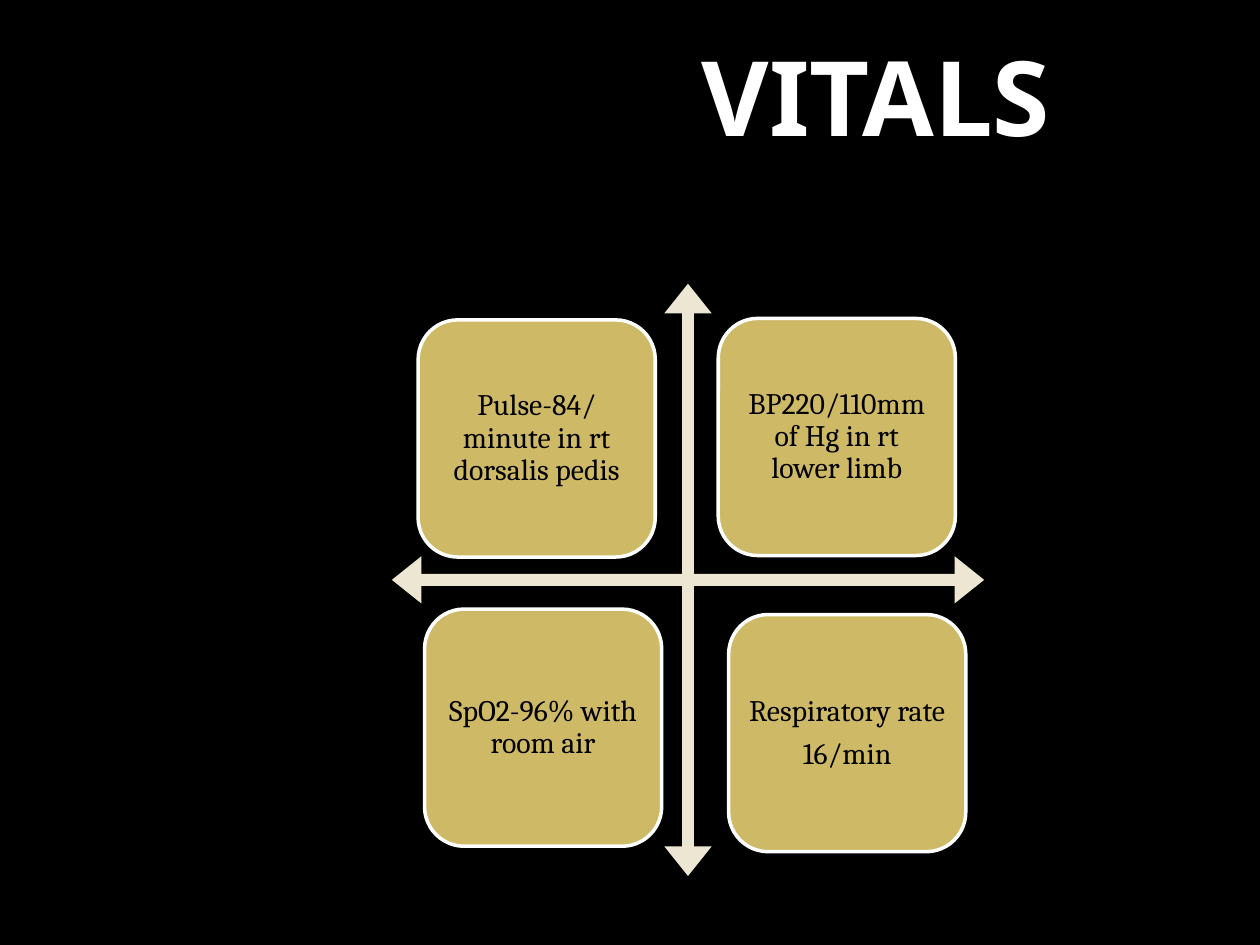
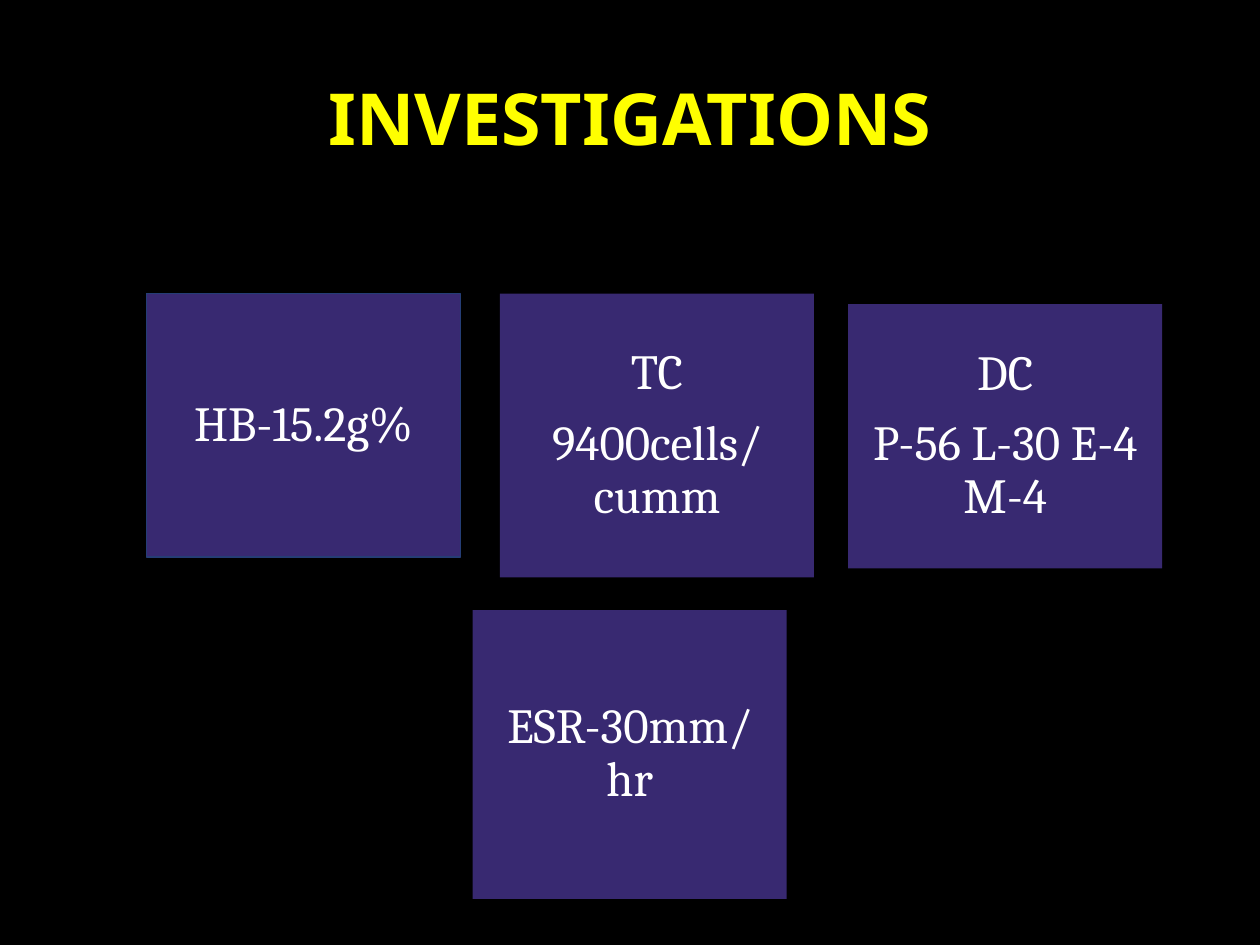
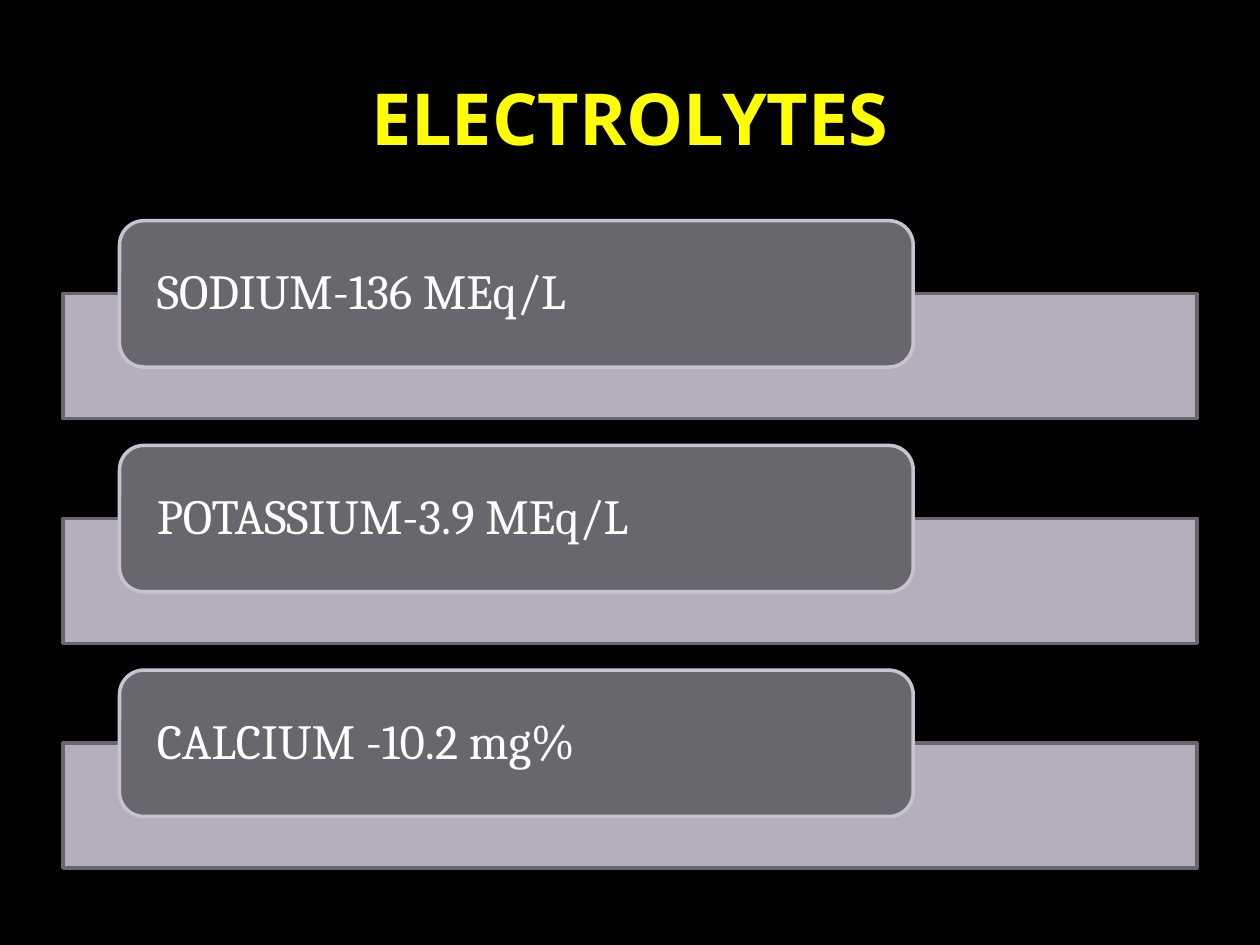
from lxml.etree import SubElement
from pptx import Presentation
from pptx.dml.color import RGBColor
from pptx.enum.shapes import MSO_SHAPE
from pptx.enum.text import MSO_ANCHOR, PP_ALIGN
from pptx.oxml.ns import qn
from pptx.util import Cm, Pt

COLORS = {
    "black": "000000", "white": "FFFFFF", "yellow": "FFFF00",
    "gold": "CEB966", "cream": "EDE6D3", "indigo": "382971",
    "navy": "253D75", "lilac": "C9C2D1", "gray": "69676D",
}
TITLE = {"name": "Noto Sans", "size": Pt(41), "bold": True}
BODY = {"name": "Cambria", "size": Pt(28)}
PARAGRAPH = {"line_spacing": 0.9, "space_after": Pt(10), "alignment": PP_ALIGN.CENTER}


def add_box(s, kind, at, fill, line=None, width=2):
    sp = s.shapes.add_shape(kind, *[Cm(v) for v in at])
    sp.shadow.inherit = False
    sp.fill.solid()
    sp.fill.fore_color.rgb = RGBColor.from_string(COLORS[fill])
    if line:
        sp.line.color.rgb = RGBColor.from_string(COLORS[line])
        sp.line.width = Pt(width)
    else:
        sp.line.fill.background()
    return sp


def write(sp, lines, font, color, paragraph, frame):
    tf = sp.text_frame
    frame = {"word_wrap": True, "vertical_anchor": MSO_ANCHOR.MIDDLE, **frame}
    for key, value in frame.items():
        setattr(tf, key, value)
    for i, line in enumerate(lines):
        p = tf.add_paragraph() if i else tf.paragraphs[0]
        for key, value in paragraph.items():
            setattr(p, key, value)
        r = p.add_run()
        r.text = line
        r.font.color.rgb = RGBColor.from_string(COLORS[color])
        for key, value in font.items():
            setattr(r.font, key, value)


prs = Presentation()
prs.slide_width, prs.slide_height = Cm(25.4), Cm(19.05)

main_title = (1.27, 0.76, 22.86, 3.18)
titles = [
    ("VITALS", (2.54, 0.64, 21.59, 2.54), "white", {"size": Pt(59.4)}, {"margin_left": Cm(8.89)}),
    ("INVESTIGATIONS", main_title, "yellow", {}, {}),
    ("ELECTROLYTES", main_title, "yellow", {}, {}),
]
slides = []
for text, at, color, font, frame in titles:
    s = prs.slides.add_slide(prs.slide_layouts[6])
    s.background.fill.solid()
    s.background.fill.fore_color.rgb = RGBColor.from_string(COLORS["black"])
    sp = s.shapes.add_textbox(*[Cm(v) for v in at])
    write(sp, [text], {**TITLE, **font}, color, {"alignment": PP_ALIGN.CENTER}, frame)
    slides.append(s)
vitals, investigations, electrolytes = slides
sides = ("margin_left", "margin_top", "margin_right", "margin_bottom")

sp = add_box(vitals, MSO_SHAPE.QUAD_ARROW, (7.9, 5.72, 11.94, 11.94), "cream")
for i, value in enumerate((0.02, 0.04, 0.05)):
    sp.adjustments[i] = value
vital_signs = [
    (8.43, 6.45, ["Pulse-84/minute in rt dorsalis pedis"]),
    (14.48, 6.42, ["BP220/110mm of Hg in rt lower limb"]),
    (8.56, 12.28, ["SpO2-96% with room air"]),
    (14.69, 12.39, ["Respiratory rate", "16/min"]),
]
for left, top, lines in vital_signs:
    sp = add_box(vitals, MSO_SHAPE.ROUNDED_RECTANGLE, (left, top, 4.78, 4.78), "gold", "white")
    write(sp, lines, {**BODY, "size": Pt(17)}, "black",
          {**PARAGRAPH, "space_after": Pt(6)}, dict.fromkeys(sides, Cm(0.18)))

blood_tests = [
    (2.95, 5.92, 5.31, "navy", ["HB-15.2g%"]),
    (10.08, 5.92, 5.72, None, ["TC", "9400cells/cumm"]),
    (17.1, 6.13, 5.33, None, ["DC", "P-56 L-30 E-4 M-4"]),
    (9.53, 12.3, 5.82, None, ["ESR-30mm/hr"]),
]
for left, top, height, line, lines in blood_tests:
    sp = add_box(investigations, MSO_SHAPE.RECTANGLE, (left, top, 6.33, height), "indigo", line, 0.75)
    write(sp, lines, BODY, "white", PARAGRAPH, dict.fromkeys(sides, Cm(0.3)))

label_frame = dict(zip(sides, (Cm(0.61), 0, Cm(0.61), 0)))
levels = ["SODIUM-136 MEq/L", "POTASSIUM-3.9 MEq/L", "CALCIUM -10.2 mg%"]
for i, level in enumerate(levels):
    top = 4.45 + 4.53 * i
    sp = add_box(electrolytes, MSO_SHAPE.RECTANGLE, (1.27, top + 1.47, 22.86, 2.52), "lilac", "gray")
    fill_color = sp.fill._xPr.find(qn("a:solidFill"))[0]
    SubElement(fill_color, qn("a:alpha"), val="90000")
    sp = add_box(electrolytes, MSO_SHAPE.ROUNDED_RECTANGLE, (2.41, top, 16, 2.95), "gray", "lilac")
    write(sp, [level], BODY, "white", {**PARAGRAPH, "alignment": PP_ALIGN.LEFT}, label_frame)

prs.save("out.pptx")
